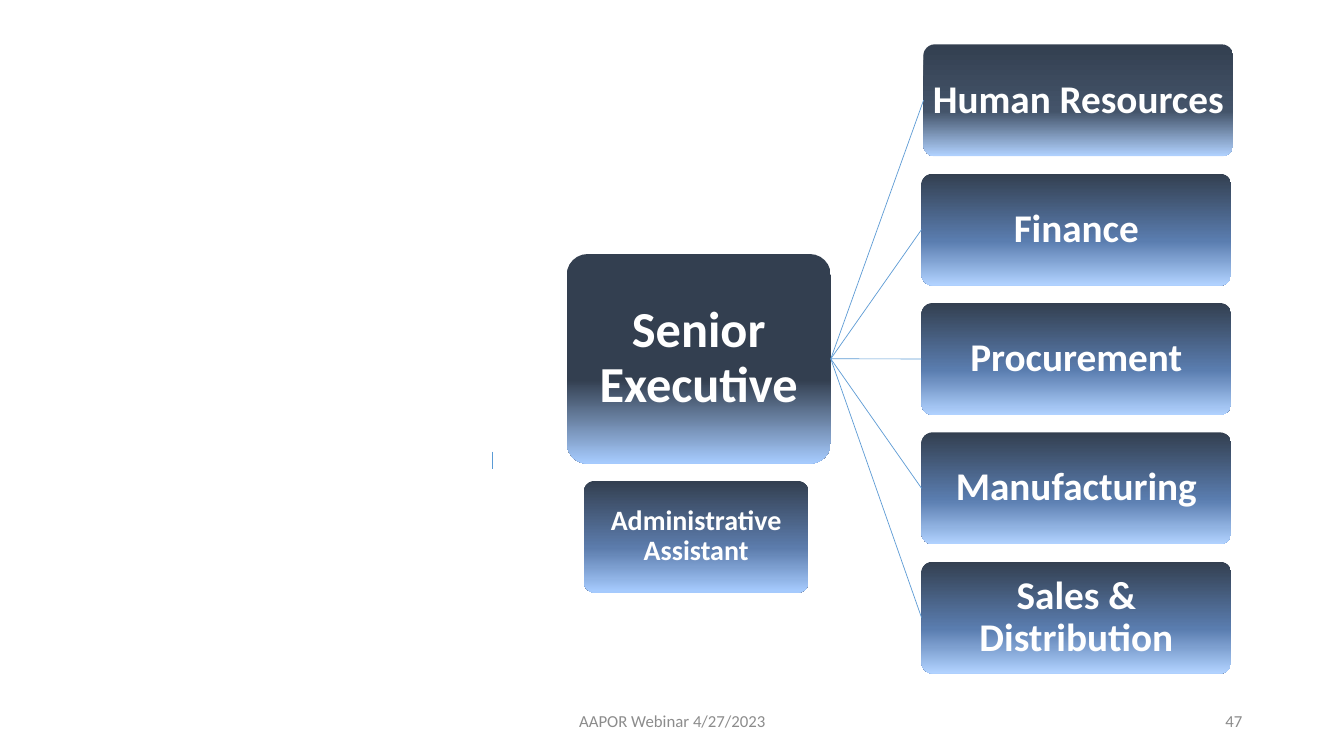
from dataclasses import dataclass

from lxml.etree import SubElement
from pptx import Presentation
from pptx.dml.color import RGBColor
from pptx.enum.shapes import MSO_CONNECTOR as Connector, MSO_SHAPE as Shape
from pptx.enum.text import MSO_ANCHOR as Anchor, PP_ALIGN as Align
from pptx.oxml.ns import qn
from pptx.util import Inches, Pt

CELL = 0.1
FONT = "Calibri"
COLOURS = {
    "top": "333F50",
    "executive": "333F50",
    "resources": "44546A",
    "department": "5A7DAF",
    "assistant": "5C7CAC",
    "staff_base": "A7CCFF",
    "department_base": "B1D2FF",
    "branch": "5F9CD5",
    "tick": "5B9BD5",
    "label": "FFFFFF",
    "footer": "8C8C8C",
}


@dataclass(frozen=True)
class Area:
    column: float
    row: float
    columns: float
    rows: float


@dataclass(frozen=True)
class Role:
    text: str
    area: Area
    size: int
    middle: str
    base: str
    inset: float


@dataclass(frozen=True)
class Footer:
    text: str
    area: Area
    align: Align


BOX_ROWS = 11.1
DEPARTMENT_STEP = 12.83
DEPARTMENT_NAMES = ("Finance", "Procurement", "Manufacturing", "Sales & Distribution")


def department(index: int, name: str, column: float = 91.4, middle: str = "department") -> Role:
    area = Area(column, 4.4 + index * DEPARTMENT_STEP, 30.7, BOX_ROWS)
    return Role(name, area, 28, middle, "department_base", 0.02)


EXECUTIVE = Role("Senior Executive", Area(56.2, 25.2, 26.2, 20.8), 36, "executive", "staff_base", 0.03)
ASSISTANT = Role("Administrative Assistant", Area(57.9, 47.7, 22.3, BOX_ROWS), 20, "assistant", "staff_base", 0.01)
DEPARTMENTS = [department(0, "Human Resources", 91.6, "resources")] + [
    department(index, name) for index, name in enumerate(DEPARTMENT_NAMES, 1)
]
FOOTERS = (
    Footer("AAPOR Webinar 4/27/2023", Area(44.2, 69.5, 45, 4), Align.CENTER),
    Footer("47", Area(94.2, 69.5, 30, 4), Align.RIGHT),
)


def cells(count: float) -> int:
    return Inches(count * CELL)


def place(area: Area) -> tuple:
    return tuple(cells(count) for count in (area.column, area.row, area.columns, area.rows))


def colour(name: str) -> RGBColor:
    return RGBColor.from_string(COLOURS[name])


def apply(target, values: dict) -> None:
    for name, value in values.items():
        setattr(target, name, value)


def write(shape, text: str, align: Align, size: int, tone: str, bold: bool, spacing: float) -> None:
    apply(shape.text_frame, {"word_wrap": True, "vertical_anchor": Anchor.MIDDLE})
    paragraph = shape.text_frame.paragraphs[0]
    apply(paragraph, {"text": text, "alignment": align, "line_spacing": spacing})
    apply(paragraph.font, {"name": FONT, "size": Pt(size), "bold": bold})
    paragraph.font.color.rgb = colour(tone)


def shade(shape, middle: str, base: str) -> None:
    shape.fill.gradient()
    shape.fill.gradient_angle = 270
    stops = shape.fill.gradient_stops
    stop_list = shape.element.spPr.find(qn("a:gradFill")).find(qn("a:gsLst"))
    for stop in list(stop_list):
        stop_list.remove(stop)
    for position, tone in ((0, "top"), (60, middle), (100, base)):
        stop = SubElement(stop_list, qn("a:gs"), pos=str(position * 1000))
        SubElement(stop, qn("a:srgbClr"), val=COLOURS[tone])


def add_role(slide, role: Role):
    shape = slide.shapes.add_shape(Shape.ROUNDED_RECTANGLE, *place(role.area))
    shape.adjustments[0] = 0.1
    shape.shadow.inherit = False
    shape.line.fill.background()
    shade(shape, role.middle, role.base)
    sides = ("margin_left", "margin_top", "margin_right", "margin_bottom")
    apply(shape.text_frame, dict.fromkeys(sides, Inches(role.inset)))
    write(shape, role.text, Align.CENTER, role.size, "label", True, 0.9)
    return shape


def add_line(slide, start: tuple, end: tuple, tone: str):
    line = slide.shapes.add_connector(Connector.STRAIGHT, *map(cells, start + end))
    line.line.width = Pt(0.5)
    line.line.color.rgb = colour(tone)
    SubElement(line.element.spPr, qn("a:effectLst"))
    return line


def add_branch(slide, parent, child) -> None:
    branch = add_line(slide, (0, 0), (0, 0), "branch")
    branch.begin_connect(parent, 3)
    branch.end_connect(child, 1)


def add_footer(slide, footer: Footer) -> None:
    box = slide.shapes.add_textbox(*place(footer.area))
    write(box, footer.text, footer.align, 12, "footer", False, 1.0)


def main() -> None:
    presentation = Presentation()
    apply(presentation, {"slide_width": Inches(13.33), "slide_height": Inches(7.5)})
    slide = presentation.slides.add_slide(presentation.slide_layouts[6])
    executive = add_role(slide, EXECUTIVE)
    for role in DEPARTMENTS:
        add_branch(slide, executive, add_role(slide, role))
    add_role(slide, ASSISTANT)
    add_line(slide, (48.8, 44.8), (48.8, 46.5), "tick")
    for footer in FOOTERS:
        add_footer(slide, footer)
    presentation.save("out.pptx")


if __name__ == "__main__":
    main()
